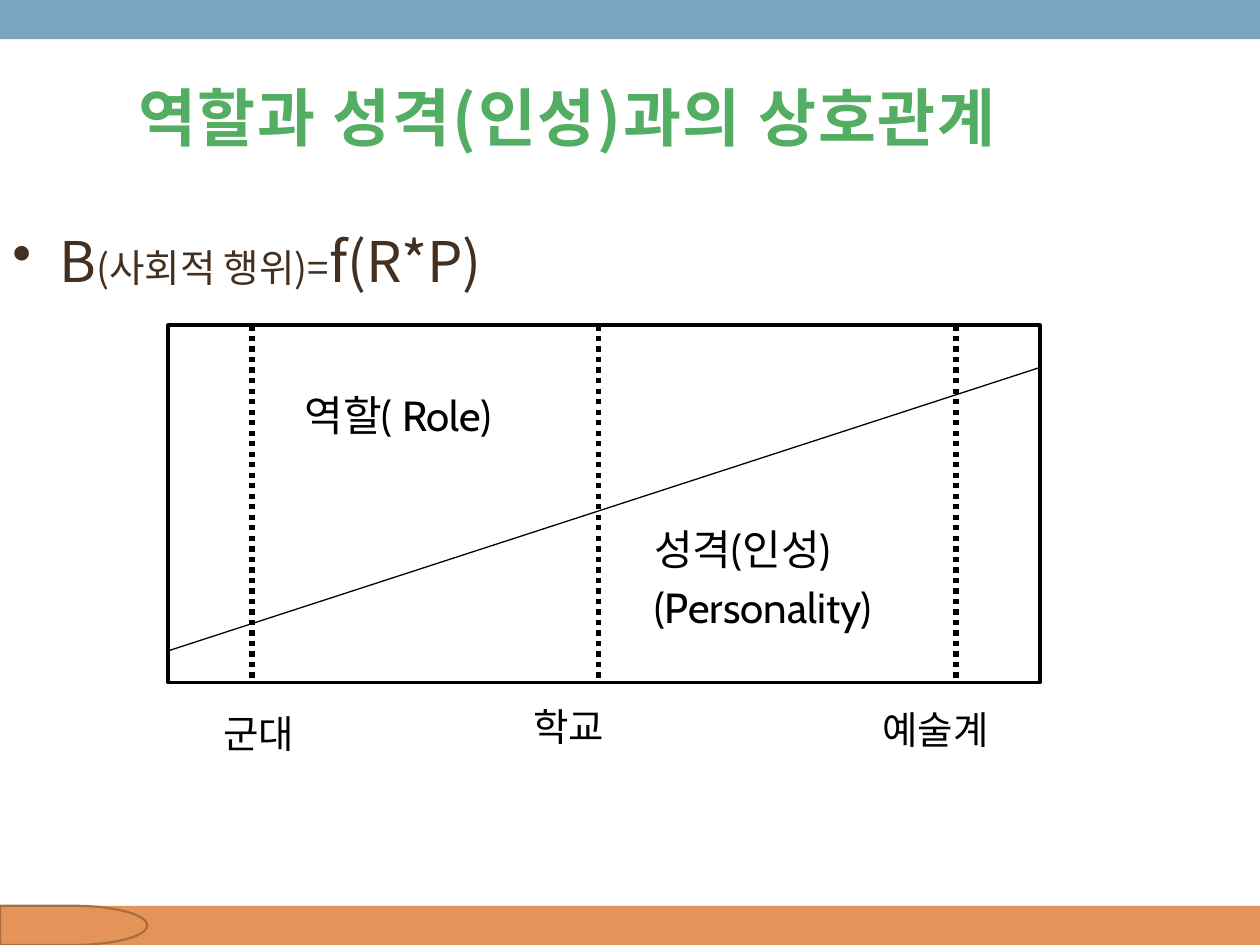
from dataclasses import dataclass

from lxml import etree
from pptx import Presentation
from pptx.dml.color import RGBColor
from pptx.enum.dml import MSO_LINE
from pptx.enum.shapes import MSO_CONNECTOR, MSO_SHAPE
from pptx.enum.text import MSO_ANCHOR, MSO_AUTO_SIZE, PP_ALIGN
from pptx.oxml.ns import qn
from pptx.util import Cm, Pt

RECTANGLE = MSO_SHAPE.RECTANGLE
DELAY = MSO_SHAPE.FLOWCHART_DELAY
STRAIGHT = MSO_CONNECTOR.STRAIGHT
DOTTED = MSO_LINE.ROUND_DOT
CENTER = PP_ALIGN.CENTER
MIDDLE = MSO_ANCHOR.MIDDLE
GROW = MSO_AUTO_SIZE.SHAPE_TO_FIT_TEXT

BLACK = RGBColor(0x00, 0x00, 0x00)
BLUE = RGBColor(0x7B, 0xA5, 0xBE)
ORANGE = RGBColor(0xE4, 0x94, 0x58)
DARK_ORANGE = RGBColor(0xA9, 0x6D, 0x41)
GREEN = RGBColor(0x53, 0xAD, 0x62)
BROWN = RGBColor(0x43, 0x30, 0x21)

HANGUL_FONT = "Noto Sans CJK KR"
LATIN_FONT = "Cabin"
PAGE_WIDTH = 25.4
PAGE_HEIGHT = 19.05
BAND_HEIGHT = 0.79

TITLE_FORMAT = {"name": HANGUL_FONT, "size": Pt(36), "bold": True}
FORMULA_FORMAT = {"name": HANGUL_FONT, "size": Pt(32)}
FORMULA_NOTE_FORMAT = {"name": HANGUL_FONT, "size": Pt(22)}
AREA_FORMAT = {"name": LATIN_FONT, "size": Pt(24)}
PLACE_FORMAT = {"name": LATIN_FONT, "size": Pt(22)}


@dataclass
class Box:
    left: float
    top: float
    width: float
    height: float

    def inner(self, left, top, width, height):
        return Box(self.left + left, self.top + top, width, height)

    def lengths(self):
        return [Cm(n) for n in (self.left, self.top, self.width, self.height)]


def apply_format(target, values):
    for name, value in values.items():
        setattr(target, name, value)


def add_panel(page, kind, box, fill=None, line=None, weight=0):
    panel = page.shapes.add_shape(kind, *box.lengths())
    panel.shadow.inherit = False
    if fill is None:
        panel.fill.background()
    else:
        panel.fill.solid()
        panel.fill.fore_color.rgb = fill
    if line is None:
        panel.line.fill.background()
    else:
        panel.line.color.rgb = line
        panel.line.width = Pt(weight)


def add_line(page, start, end, values):
    line = page.shapes.add_connector(STRAIGHT, *[Cm(n) for n in start + end])
    line.line.color.rgb = BLACK
    apply_format(line.line, values)
    etree.SubElement(line._element.spPr, qn("a:effectLst"))


def add_text_frame(page, box, **values):
    frame = page.shapes.add_textbox(*box.lengths()).text_frame
    apply_format(frame, {"word_wrap": True, **values})
    return frame


def add_span(para, text, color, values):
    span = para.add_run()
    span.text = text
    span.font.color.rgb = color
    apply_format(span.font, values)
    east_asian = etree.SubElement(span.font._element, qn("a:ea"))
    east_asian.set("typeface", HANGUL_FONT)
    return span


def add_bands(page, box):
    bottom = box.height - BAND_HEIGHT
    add_panel(page, RECTANGLE, box.inner(0, bottom, box.width, BAND_HEIGHT), ORANGE)
    add_panel(page, RECTANGLE, box.inner(0, 0, box.width, BAND_HEIGHT), BLUE)
    add_panel(page, DELAY, box.inner(0, bottom, 2.97, BAND_HEIGHT),
              ORANGE, DARK_ORANGE, 1.25)


def add_title(page, box):
    para = add_text_frame(page, box, vertical_anchor=MIDDLE).paragraphs[0]
    para.alignment = CENTER
    span = add_span(para, "역할과 성격(인성)과의 상호관계", GREEN, TITLE_FORMAT)
    span.font._element.set("spc", "100")


def add_formula(page, box):
    para = add_text_frame(page, box).paragraphs[0]
    properties = para._p.get_or_add_pPr()
    properties.set("marL", str(Cm(0.95)))
    properties.set("indent", str(Cm(-0.95)))
    etree.SubElement(properties, qn("a:buChar")).set("char", "•")
    for text, values in (("B", FORMULA_FORMAT),
                         ("(사회적 행위)=", FORMULA_NOTE_FORMAT),
                         ("f(R*P)", FORMULA_FORMAT)):
        add_span(para, text, BROWN, values)


def add_diagram(page, box):
    right, bottom = box.left + box.width, box.top + box.height
    add_panel(page, RECTANGLE, box, line=BLACK, weight=2.25)
    for offset in (1.69, 8.68, 15.88):
        x = box.left + offset
        add_line(page, (x, box.top), (x, bottom),
                 {"width": Pt(3), "dash_style": DOTTED})
    add_line(page, (box.left, bottom - 0.64), (right, box.top + 0.85),
             {"width": Pt(0.75)})

    role = add_text_frame(page, box.inner(2.5, 1.16, 5.08, 1.27),
                          word_wrap=False, auto_size=GROW)
    add_span(role.paragraphs[0], "역할( Role)", BLACK, AREA_FORMAT)

    personality = add_text_frame(page, box.inner(9.55, 3.98, 6.98, 2.39),
                                 auto_size=GROW)
    first, second = personality.paragraphs[0], personality.add_paragraph()
    apply_format(first, {"line_spacing": 0.9})
    apply_format(second, {"line_spacing": 0.7, "space_before": Pt(12)})
    add_span(first, "성격(인성)", BLACK, AREA_FORMAT)
    add_span(second, "(Personality)", BLACK, AREA_FORMAT)

    for text, left, top, width in (("군대", 0.86, 7.62, 2.74),
                                   ("학교", 7.11, 7.49, 2.57),
                                   ("예술계", 14.15, 7.54, 3.56)):
        place = add_text_frame(page, box.inner(left, top, width, 1.19),
                               auto_size=GROW)
        add_span(place.paragraphs[0], text, BLACK, PLACE_FORMAT)


def main():
    deck = Presentation()
    deck.slide_width, deck.slide_height = Cm(PAGE_WIDTH), Cm(PAGE_HEIGHT)
    page = deck.slides.add_slide(deck.slide_layouts[6])
    add_bands(page, Box(0, 0, PAGE_WIDTH, PAGE_HEIGHT))
    add_title(page, Box(0, 0.76, 22.86, 3.18))
    add_formula(page, Box(0, 4.45, 22.86, 12.57))
    add_diagram(page, Box(3.39, 6.56, 17.57, 7.2))
    deck.save("out.pptx")


if __name__ == "__main__":
    main()
